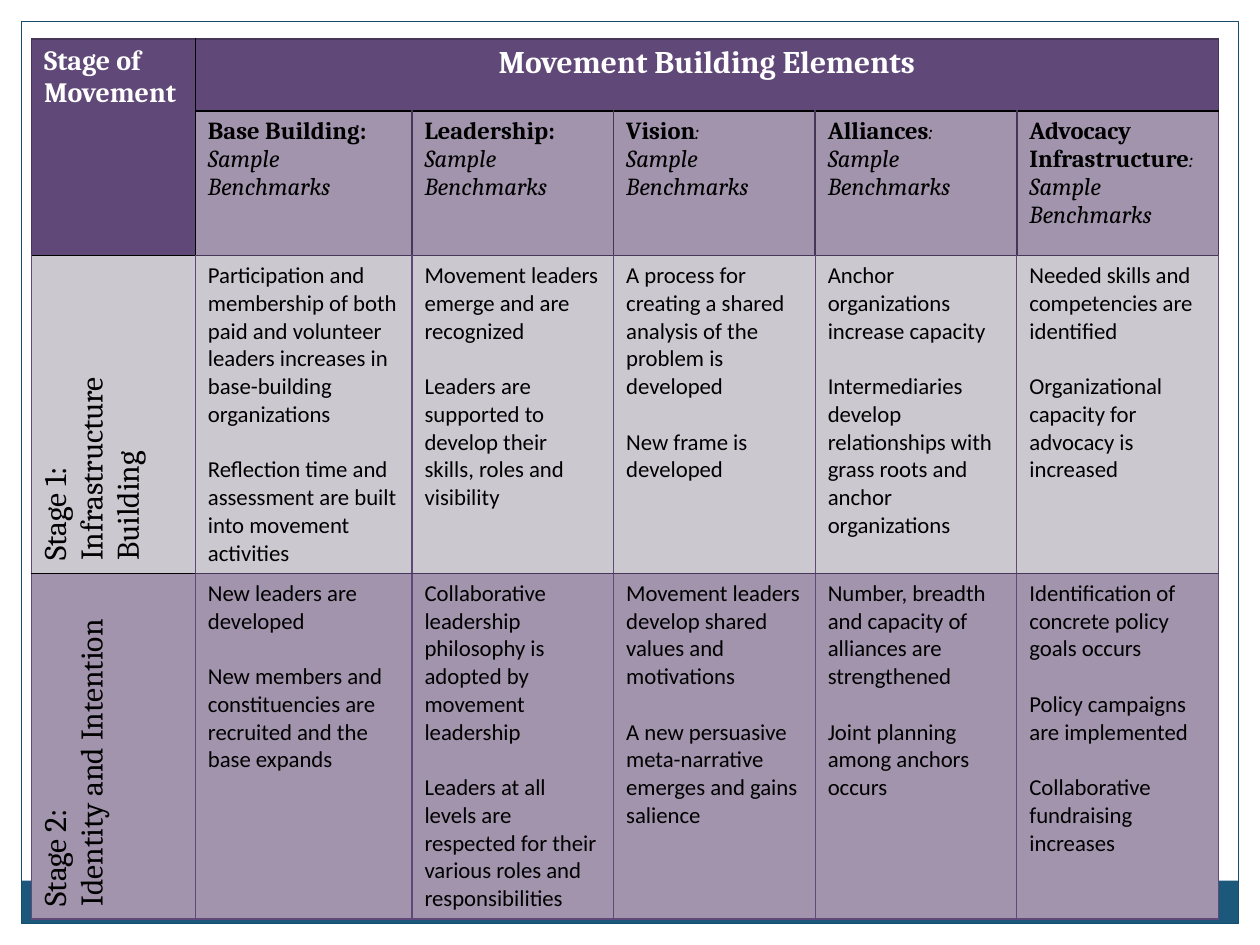
from lxml.etree import SubElement
from pptx import Presentation
from pptx.dml.color import RGBColor
from pptx.enum.shapes import MSO_SHAPE
from pptx.enum.text import PP_ALIGN
from pptx.oxml.ns import qn
from pptx.util import Inches, Pt

PURPLE, DARK_PURPLE, MAUVE, PALE = "604878", "48365A", "A194AC", "CCC8D0"
BLACK, WHITE = "000000", "FFFFFF"
HEADING_FONT, BODY_FONT = "Cambria", "Calibri"

MARGIN = 0.17
COLUMN_WIDTHS = [1.3, 1.72, 1.6, 1.6, 1.6, 1.6]
ROW_HEIGHTS = [0.57, 1.15, 2.48, 2.48]

# Element name and whether its colon is bold like the name
ELEMENTS = [
    ("Base Building", True),
    ("Leadership", True),
    ("Vision", False),
    ("Alliances", False),
    ("Advocacy Infrastructure", False),
]

# Stage title lines, fill, and benchmarks for each element
STAGES = [
    (["Stage 1:", "Infrastructure Building"], PALE, [
        ["Participation and membership of both paid and volunteer leaders "
         "increases in base-building organizations",
         "Reflection time and assessment are built into movement activities"],
        ["Movement leaders emerge and are recognized",
         "Leaders are supported to develop their skills, roles and visibility"],
        ["A process for creating a shared analysis of the problem is developed",
         "New frame is developed"],
        ["Anchor organizations increase capacity",
         "Intermediaries develop relationships with grass roots and anchor "
         "organizations"],
        ["Needed skills and competencies are identified",
         "Organizational capacity for advocacy is increased"],
    ]),
    (["Stage 2:", "Identity and Intention"], MAUVE, [
        ["New leaders are developed",
         "New members and constituencies are recruited and the base expands"],
        ["Collaborative leadership philosophy is adopted by movement leadership",
         "Leaders at all levels are respected for their various roles and "
         "responsibilities"],
        ["Movement leaders develop shared values and motivations",
         "A new persuasive meta-narrative emerges and gains salience"],
        ["Number, breadth and capacity of alliances are strengthened",
         "Joint planning among anchors occurs"],
        ["Identification of concrete policy goals occurs",
         "Policy campaigns are implemented",
         "Collaborative fundraising increases"],
    ]),
]


def color(value):
    return RGBColor.from_string(value)


def add_rectangle(slide, left, top, width, height, fill=None, line=None):
    shape = slide.shapes.add_shape(
        MSO_SHAPE.RECTANGLE, Inches(left), Inches(top), Inches(width), Inches(height))
    shape.shadow.inherit = False
    if fill:
        shape.fill.solid()
        shape.fill.fore_color.rgb = color(fill)
    else:
        shape.fill.background()
    if line:
        shape.line.color.rgb = color(line)
        shape.line.width = Pt(0.75)
    else:
        shape.line.fill.background()


def set_fill(cell, value):
    cell.fill.solid()
    cell.fill.fore_color.rgb = color(value)


def set_font(font, size, name=HEADING_FONT, value=BLACK, bold=False, italic=False):
    font.size, font.name = Pt(size), name
    font.color.rgb = color(value)
    font.bold, font.italic = bold, italic


def write_lines(cell, lines, size, gap=0, align=PP_ALIGN.LEFT, **style):
    frame = cell.text_frame
    for index, line in enumerate(lines):
        paragraph = frame.add_paragraph() if index else frame.paragraphs[0]
        paragraph.text = line
        paragraph.alignment = align
        if index and gap:
            paragraph.space_before = Pt(gap)
        set_font(paragraph.font, size, **style)


def write_element(cell, name, bold_colon):
    write_lines(cell, ["", "Sample Benchmarks"], 14, italic=True)
    heading = cell.text_frame.paragraphs[0]
    run = heading.add_run()
    run.text = name + ":" if bold_colon else name
    set_font(run.font, 14, bold=True)
    if not bold_colon:
        colon = heading.add_run()
        colon.text = ":"
        set_font(colon.font, 12, italic=True)


def set_borders(cell, **sides):
    """Give each side (L, R, T, B) a colour and a width in points."""
    properties = cell._tc.get_or_add_tcPr()
    for index, side in enumerate("LRTB"):
        value, width = sides[side]
        line = SubElement(properties, qn(f"a:ln{side}"), w=str(Pt(width)))
        fill = SubElement(line, qn("a:solidFill"))
        SubElement(fill, qn("a:srgbClr"), val=value)
        properties.insert(index, line)


def draw_borders(table):
    last_row, last_column = len(ROW_HEIGHTS) - 1, len(COLUMN_WIDTHS) - 1

    def horizontal(edge, column):
        if edge == 0:
            return DARK_PURPLE, 1
        if edge > last_row:
            return PURPLE, 0.75
        return (BLACK if column == 0 or edge == 1 else DARK_PURPLE), 1

    def vertical(edge, row):
        if row > 1:
            return PURPLE, 0.75
        return (BLACK if edge == 1 else DARK_PURPLE), 1

    for row in range(last_row + 1):
        for column in range(last_column + 1):
            heading_row = row == 0 and column > 0
            left = 1 if heading_row else column
            right = last_column + 1 if heading_row else column + 1
            stage_heading = row < 2 and column == 0
            top = 0 if stage_heading else row
            bottom = 2 if stage_heading else row + 1
            set_borders(table.cell(row, column),
                        L=vertical(left, row), R=vertical(right, row),
                        T=horizontal(top, column), B=horizontal(bottom, column))


def add_movement_table(slide):
    table = slide.shapes.add_table(
        len(ROW_HEIGHTS), len(COLUMN_WIDTHS), Inches(0.25), Inches(0.31),
        Inches(sum(COLUMN_WIDTHS)), Inches(sum(ROW_HEIGHTS))).table
    table.first_row = table.horz_banding = False
    for column, width in zip(table.columns, COLUMN_WIDTHS):
        column.width = Inches(width)
    for row, height in zip(table.rows, ROW_HEIGHTS):
        row.height = Inches(height)

    # Header cells
    row_fills = [PURPLE, MAUVE] + [fill for _, fill, _ in STAGES]
    for row, fill in enumerate(row_fills):
        for column in range(len(COLUMN_WIDTHS)):
            set_fill(table.cell(row, column), PURPLE if row < 2 and column == 0 else fill)
    table.cell(0, 0).merge(table.cell(1, 0))
    table.cell(0, 1).merge(table.cell(0, 5))
    write_lines(table.cell(0, 0), ["Stage of Movement"], 16, value=WHITE, bold=True)
    write_lines(table.cell(0, 1), ["Movement Building Elements"], 18,
                align=PP_ALIGN.CENTER, value=WHITE, bold=True)
    for column, (name, bold_colon) in enumerate(ELEMENTS, 1):
        write_element(table.cell(1, column), name, bold_colon)

    # Stage rows
    for row, (title, _, benchmarks) in enumerate(STAGES, 2):
        stage = table.cell(row, 0)
        write_lines(stage, title, 18)
        stage._tc.get_or_add_tcPr().set("vert", "vert270")
        for column, lines in enumerate(benchmarks, 1):
            write_lines(table.cell(row, column), lines, 13, gap=15.9, name=BODY_FONT)

    draw_borders(table)


def main():
    presentation = Presentation()
    presentation.slide_width, presentation.slide_height = Inches(10), Inches(7.5)
    slide = presentation.slides.add_slide(presentation.slide_layouts[6])

    # White page margins: top, right, left
    add_rectangle(slide, 0, 0, 10, MARGIN, fill=WHITE)
    for left in (10 - MARGIN, 0):
        add_rectangle(slide, left, 0, MARGIN, 7.5, fill=WHITE)

    # Bottom band and page frame
    add_rectangle(slide, MARGIN, 6.99, 9.66, 0.34, fill="1B587C")
    add_rectangle(slide, MARGIN, MARGIN, 9.66, 7.16, line="184E6D")

    add_movement_table(slide)
    presentation.save("out.pptx")


if __name__ == "__main__":
    main()
